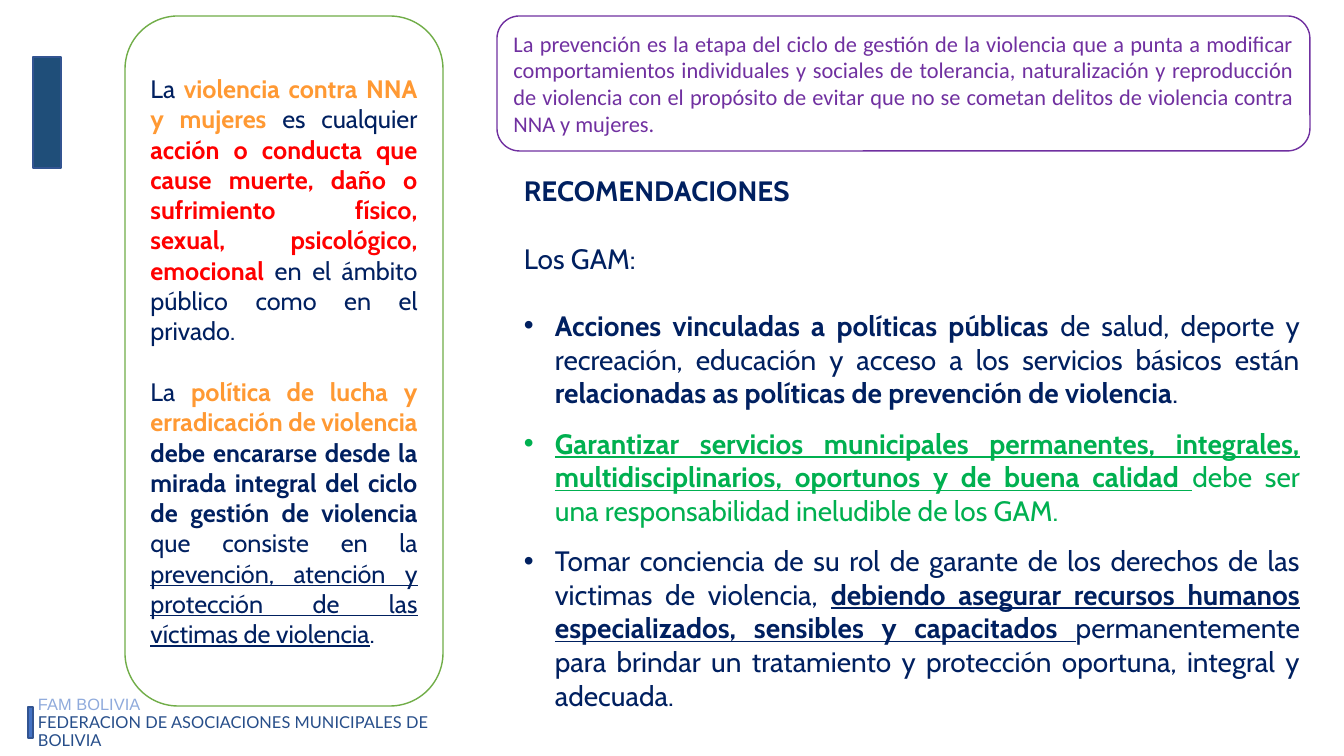
import pptx
import pptx.util
import pptx.dml.color
import pptx.enum.shapes
import pptx.enum.text
import pptx.oxml.ns
from lxml import etree

COLORS = {
    "white": "FFFFFF", "navy": "002060", "orange": "FF9933", "red": "FF0000",
    "green": "00B050", "purple": "7030A0", "leaf": "70AD47", "bar": "1F4E79",
    "accent": "4472C4", "edge": "325491", "pale": "8FAADC", "footer": "274E8A",
}
SHAPES = pptx.enum.shapes.MSO_SHAPE
ALIGN = pptx.enum.text.PP_ALIGN
ANCHOR = pptx.enum.text.MSO_ANCHOR


class Deck:
    scale = 914400 / 100.8
    indent = 31

    def __init__(self, width, height):
        self.prs = pptx.Presentation()
        self.prs.slide_width = self.px(width)
        self.prs.slide_height = self.px(height)
        self.s = self.prs.slides.add_slide(self.prs.slide_layouts[6])

    def px(self, n):
        return pptx.util.Emu(round(n * self.scale))

    def color(self, name):
        return pptx.dml.color.RGBColor.from_string(COLORS[name])

    def shape(self, kind, box, fill, line):
        sp = self.s.shapes.add_shape(kind, *map(self.px, box))
        sp.shadow.inherit = False
        sp.fill.solid()
        sp.fill.fore_color.rgb = self.color(fill)
        sp.line.color.rgb = self.color(line)
        sp.line.width = pptx.util.Pt(1)
        return sp

    def textbox(self, box):
        return self.s.shapes.add_textbox(*map(self.px, box))

    def frame(self, sp, anchor):
        tf = sp.text_frame
        tf.word_wrap = True
        tf.vertical_anchor = anchor
        return tf

    def bullet(self, p):
        pPr = p._p.get_or_add_pPr()
        pPr.set("marL", str(self.px(self.indent)))
        pPr.set("indent", str(-self.px(self.indent)))
        font = etree.SubElement(pPr, pptx.oxml.ns.qn("a:buFont"))
        font.set("typeface", "Arial")
        char = etree.SubElement(pPr, pptx.oxml.ns.qn("a:buChar"))
        char.set("char", "•")

    def paragraph(self, tf, runs, font, size, before=0, bullet=False,
                  align=ALIGN.JUSTIFY, spacing=None):
        p = tf.paragraphs[0] if not tf.text else tf.add_paragraph()
        if bullet:
            self.bullet(p)
        p.alignment = align
        if before:
            p.space_before = pptx.util.Pt(before)
        if spacing:
            p.line_spacing = spacing
        for text, color, style in runs:
            r = p.add_run()
            r.text = text
            r.font.name = font
            r.font.size = pptx.util.Pt(size)
            r.font.color.rgb = self.color(color)
            r.font.bold = "b" in style
            r.font.underline = "u" in style


FOOTER = [
    ("FAM BOLIVIA", "Arial", "pale"),
    ("FEDERACION DE ASOCIACIONES MUNICIPALES DE BOLIVIA", "Lato", "footer"),
]

DEFINITIONS = [
    [("La ", "navy", ""),
     ("violencia contra NNA y mujeres", "orange", "b"),
     (" es cualquier ", "navy", ""),
     ("acción o conducta que cause muerte, daño o sufrimiento físico, sexual, "
      "psicológico, emocional ", "red", "b"),
     ("en el ámbito público como en el privado.", "navy", "")],
    [("La ", "navy", ""),
     ("política de lucha y erradicación de violencia ", "orange", "b"),
     ("debe encararse desde la mirada integral del ciclo de gestión de violencia",
      "navy", "b"),
     (" que consiste en la ", "navy", ""),
     ("prevención, atención y protección de las víctimas de violencia", "navy", "u"),
     (".", "navy", "")],
]

PREVENTION = (
    "La prevención es la etapa del ciclo de gestión de la violencia que a punta a "
    "modificar comportamientos individuales y sociales de tolerancia, naturalización "
    "y reproducción de violencia con el propósito de evitar que no se cometan delitos "
    "de violencia contra NNA y mujeres."
)

RECOMMENDATIONS = [
    (0, False, [("RECOMENDACIONES", "navy", "b")]),
    (24, False, [("Los GAM:", "navy", "")]),
    (24, True, [
        ("Acciones vinculadas a políticas públicas ", "navy", "b"),
        ("de salud, deporte y recreación, educación y acceso a los servicios básicos "
         "están ", "navy", ""),
        ("relacionadas as políticas de prevención de violencia", "navy", "b"),
        (".", "navy", "")]),
    (12, True, [
        ("Garantizar servicios municipales permanentes, integrales, "
         "multidisciplinarios, oportunos y de buena calidad ", "green", "bu"),
        ("debe ser una responsabilidad ineludible de los GAM.", "green", "")]),
    (12, True, [
        ("Tomar conciencia de su rol de garante de los derechos de las victimas de "
         "violencia, ", "navy", ""),
        ("debiendo asegurar recursos humanos especializados, sensibles y capacitados ",
         "navy", "bu"),
        ("permanentemente para brindar un tratamiento y protección oportuna, integral "
         "y adecuada.", "navy", "")]),
]


def main():
    deck = Deck(1344, 756)

    tf = deck.frame(deck.textbox((28, 690, 425, 66)), ANCHOR.MIDDLE)
    for text, font, color in FOOTER:
        deck.paragraph(tf, [(text, color, "")], font, 11.7,
                       align=ALIGN.LEFT, spacing=0.9)
    deck.shape(SHAPES.RECTANGLE, (28, 707, 5, 31), "accent", "edge")
    deck.shape(SHAPES.RECTANGLE, (33, 57, 28, 111), "bar", "edge")

    tf = deck.frame(deck.textbox((514, 169, 796, 560)), ANCHOR.TOP)
    for before, bullet, runs in RECOMMENDATIONS:
        deck.paragraph(tf, runs, "Cabin", 20, before, bullet)

    card = deck.shape(SHAPES.ROUNDED_RECTANGLE, (125, 16, 318, 690), "white", "leaf")
    tf = deck.frame(card, ANCHOR.MIDDLE)
    for i, runs in enumerate(DEFINITIONS):
        deck.paragraph(tf, runs, "Cabin", 18, before=22 * i)

    card = deck.shape(SHAPES.ROUNDED_RECTANGLE, (497, 16, 813, 135), "white", "purple")
    tf = deck.frame(card, ANCHOR.MIDDLE)
    deck.paragraph(tf, [(PREVENTION, "purple", "")], "Calibri", 16)

    deck.prs.save("out.pptx")


if __name__ == "__main__":
    main()
